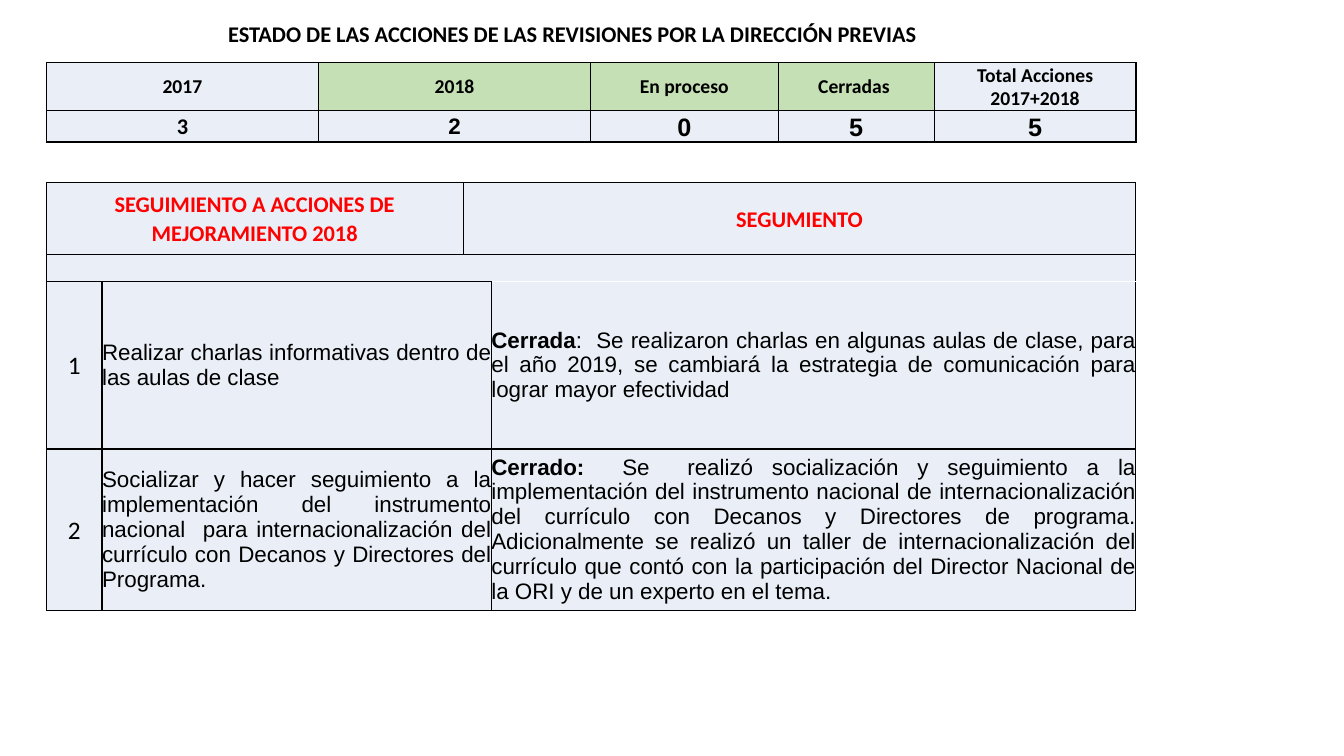
from lxml.etree import SubElement
from pptx import Presentation
from pptx.dml.color import RGBColor
from pptx.enum.text import MSO_ANCHOR, PP_ALIGN
from pptx.oxml.ns import qn
from pptx.util import Pt

BLACK = RGBColor(0, 0, 0)
WHITE = RGBColor(255, 255, 255)
RED = RGBColor(255, 0, 0)
PALE = RGBColor(0xEA, 0xEF, 0xF7)
GREEN = RGBColor(0xC5, 0xE0, 0xB4)

TITLE = "ESTADO DE LAS ACCIONES DE LAS REVISIONES POR LA DIRECCIÓN PREVIAS"
SUMMARY = [
    ("2017", PALE, "3", "Calibri", 16, MSO_ANCHOR.MIDDLE),
    ("2018", GREEN, "2", "Arial", 16, MSO_ANCHOR.MIDDLE),
    ("En proceso", GREEN, "0", "Arial", 18, MSO_ANCHOR.BOTTOM),
    ("Cerradas ", GREEN, "5", "Arial", 18, MSO_ANCHOR.BOTTOM),
    ("Total Acciones\n2017+2018", PALE, "5", "Arial", 18, MSO_ANCHOR.BOTTOM),
]
HEADINGS = ["SEGUIMIENTO A ACCIONES DE MEJORAMIENTO 2018", "SEGUMIENTO"]
ACTIONS = [
    ("Realizar charlas informativas dentro de las aulas de clase",
     "Cerrada",
     ":  Se realizaron charlas en algunas aulas de clase, para el año 2019, se cambiará "
     "la estrategia de comunicación para lograr mayor efectividad"),
    ("Socializar y hacer seguimiento a la implementación del instrumento nacional  para "
     "internacionalización del currículo con Decanos y Directores del Programa.",
     "Cerrado:  ",
     "Se  realizó socialización y seguimiento a la implementación del instrumento nacional "
     "de internacionalización del currículo con Decanos y Directores de programa. "
     "Adicionalmente se realizó un taller de internacionalización del currículo que contó "
     "con la participación del Director Nacional de la ORI y de un experto en el tema."),
]

TABLE_LEFT = 33.1
SUMMARY_TOP, SUMMARY_COLUMNS, SUMMARY_ROWS = 44.6, [194.4, 194.4, 133.9, 111.6, 144], [34.6, 22.3]
ACTIONS_TOP, ACTIONS_COLUMNS, ACTIONS_ROWS = 130.3, [39.8, 257.9, 20.2, 460.4], [51.4, 19.5, 119.5, 115]


def format_span(span, font, size, color=BLACK, bold=False):
    span.font.name = font
    span.font.size = Pt(size)
    span.font.color.rgb = color
    span.font.bold = bold


def draw_border(cell, side, color):
    line = SubElement(cell._tc.get_or_add_tcPr(), qn("a:ln" + side), w=str(Pt(1)))
    SubElement(SubElement(line, qn("a:solidFill")), qn("a:srgbClr"), val=str(color))


def add_grid(page, top, columns, rows, inset, white_edges=()):
    frame = page.shapes.add_table(len(rows), len(columns), Pt(TABLE_LEFT), Pt(top),
                                  Pt(sum(columns)), Pt(sum(rows)))
    table = frame.table
    table.first_row = table.horz_banding = False
    for column, width in zip(table.columns, columns):
        column.width = Pt(width)
    for row, height in zip(table.rows, rows):
        row.height = Pt(height)
    for r in range(len(rows)):
        for c in range(len(columns)):
            cell = table.cell(r, c)
            cell.margin_left = cell.margin_right = cell.margin_top = Pt(inset)
            cell.margin_bottom = 0
            for side in "LRTB":
                draw_border(cell, side, WHITE if (r, c, side) in white_edges else BLACK)
            cell.fill.solid()
            cell.fill.fore_color.rgb = PALE
    return table


def fill_cell(cell, text, font, size, color=BLACK, bold=False,
              align=PP_ALIGN.CENTER, anchor=MSO_ANCHOR.MIDDLE, spaced=False):
    cell.text_frame.text = text
    cell.vertical_anchor = anchor
    for para in cell.text_frame.paragraphs:
        para.alignment = align
        if spaced:
            para.line_spacing = 1.07
            para.space_after = Pt(8)
        for span in para.runs:
            format_span(span, font, size, color, bold)


def add_title(page):
    box = page.shapes.add_textbox(Pt(14.4), Pt(10.8), Pt(789.1), Pt(26.6))
    box.text_frame.word_wrap = True
    box.text_frame.text = TITLE
    para = box.text_frame.paragraphs[0]
    para.alignment = PP_ALIGN.CENTER
    format_span(para.runs[0], "Calibri", 16, bold=True)


def add_summary(page):
    table = add_grid(page, SUMMARY_TOP, SUMMARY_COLUMNS, SUMMARY_ROWS, 0.7)
    for c, (heading, color, count, font, size, anchor) in enumerate(SUMMARY):
        fill_cell(table.cell(0, c), heading, "Calibri", 14, bold=True)
        table.cell(0, c).fill.fore_color.rgb = color
        fill_cell(table.cell(1, c), count, font, size, bold=True, anchor=anchor)


def add_actions(page):
    table = add_grid(page, ACTIONS_TOP, ACTIONS_COLUMNS, ACTIONS_ROWS, 0,
                     white_edges={(1, 3, "B"), (2, 3, "T")})
    for c, heading in zip((0, 2), HEADINGS):
        table.cell(0, c).merge(table.cell(0, c + 1))
        fill_cell(table.cell(0, c), heading, "Calibri", 16, RED, True, spaced=True)
    table.cell(1, 0).merge(table.cell(1, 3))
    for c in range(4):
        para = table.cell(1, c).text_frame.paragraphs[0]
        SubElement(para._p, qn("a:endParaRPr"), sz="1200")
    for number, (action, status, detail) in enumerate(ACTIONS, 1):
        r = number + 1
        table.cell(r, 1).merge(table.cell(r, 2))
        fill_cell(table.cell(r, 0), str(number), "Calibri", 18, spaced=True)
        fill_cell(table.cell(r, 1), action, "Arial", 16, align=PP_ALIGN.JUSTIFY)
        follow_up = table.cell(r, 3)
        fill_cell(follow_up, status, "Arial", 16, bold=True, align=PP_ALIGN.JUSTIFY)
        span = follow_up.text_frame.paragraphs[0].add_run()
        span.text = detail
        format_span(span, "Arial", 16)


def main():
    deck = Presentation()
    deck.slide_width, deck.slide_height = Pt(960), Pt(540)
    page = deck.slides.add_slide(deck.slide_layouts[6])
    add_title(page)
    add_summary(page)
    add_actions(page)
    deck.save("out.pptx")


if __name__ == "__main__":
    main()
